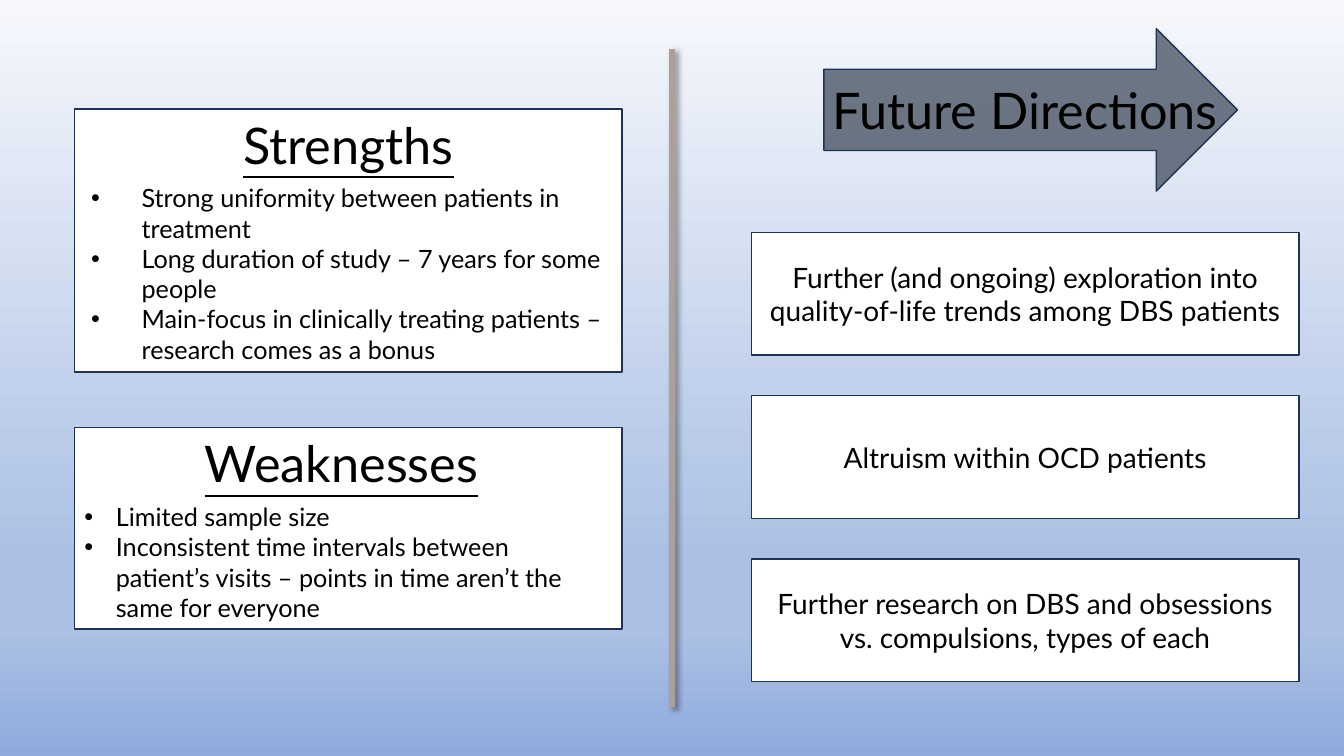
from copy import deepcopy

from lxml.etree import SubElement
from pptx import Presentation
from pptx.dml.color import RGBColor
from pptx.enum.shapes import MSO_CONNECTOR, MSO_SHAPE
from pptx.enum.text import MSO_ANCHOR, PP_ALIGN
from pptx.oxml.ns import qn
from pptx.util import Pt

BLACK = RGBColor(0x00, 0x00, 0x00)
WHITE = RGBColor(0xFF, 0xFF, 0xFF)
NAVY = RGBColor(0x1E, 0x32, 0x56)
SLATE = RGBColor(0x33, 0x3F, 0x50)
TAUPE = RGBColor(0xAD, 0xA0, 0x9A)
BACKDROP = [
    (0, RGBColor(0xF6, 0xF8, 0xFC)),
    (74, RGBColor(0xAB, 0xC0, 0xE4)),
    (83, RGBColor(0xAB, 0xC0, 0xE4)),
    (100, RGBColor(0x8F, 0xAA, 0xDC)),
]
TITLE_SIZE, CARD_SIZE, BULLET_SIZE = 36, 20, 18
BOX_WIDTH = 391


class Deck:
    """Style and current slide."""

    font = "Lato"

    def __init__(self, width, height):
        self.presentation = Presentation()
        self.presentation.slide_width = Pt(width)
        self.presentation.slide_height = Pt(height)
        self.slide = self.presentation.slides.add_slide(self.presentation.slide_layouts[6])

    def backdrop(self, stops):
        fill = self.slide.background.fill
        fill.gradient()
        fill.gradient_angle = 270
        stop_list = next(self.slide.element.iter(qn("a:gsLst")))
        for _ in range(len(stops) - len(stop_list)):
            stop_list.append(deepcopy(stop_list[0]))
        for stop, (position, color) in zip(fill.gradient_stops, stops):
            stop.position = position / 100
            stop.color.rgb = color

    def shape(self, kind, left, top, width, height, color, opacity=100):
        shape = self.slide.shapes.add_shape(kind, Pt(left), Pt(top), Pt(width), Pt(height))
        shape.shadow.inherit = False
        shape.fill.solid()
        shape.fill.fore_color.rgb = color
        if opacity < 100:
            fill_color = shape.element.spPr.find(qn("a:solidFill"))[0]
            SubElement(fill_color, qn("a:alpha"), val=str(opacity * 1000))
        shape.line.color.rgb = NAVY
        shape.line.width = Pt(1)
        return shape

    def set_text(self, paragraph, text, size, align=PP_ALIGN.CENTER, underline=None):
        paragraph.text = text
        paragraph.alignment = align
        for run in paragraph.runs:
            run.font.name = self.font
            run.font.size = Pt(size)
            run.font.color.rgb = BLACK
            run.font.underline = underline

    def label(self, text, left, top, width, height, size):
        box = self.slide.shapes.add_textbox(Pt(left), Pt(top), Pt(width), Pt(height))
        box.text_frame.word_wrap = True
        self.set_text(box.text_frame.paragraphs[0], text, size)

    def card(self, text, left, top, height):
        card = self.shape(MSO_SHAPE.RECTANGLE, left, top, BOX_WIDTH, height, WHITE)
        frame = card.text_frame
        frame.word_wrap = True
        frame.vertical_anchor = MSO_ANCHOR.MIDDLE
        frame.margin_left = frame.margin_right = Pt(11.8)
        self.set_text(frame.paragraphs[0], text, CARD_SIZE)

    def bullet_panel(self, heading, points, left, top, height, indent, margins):
        panel = self.shape(MSO_SHAPE.RECTANGLE, left, top, BOX_WIDTH, height, WHITE)
        frame = panel.text_frame
        frame.word_wrap = True
        frame.vertical_anchor = MSO_ANCHOR.TOP
        frame.margin_left, frame.margin_right = (Pt(margin) for margin in margins)
        self.set_text(frame.paragraphs[0], heading, TITLE_SIZE, underline=True)
        frame.paragraphs[0].space_after = Pt(6)
        for point in points:
            paragraph = frame.add_paragraph()
            properties = paragraph._p.get_or_add_pPr()
            properties.set("marL", str(Pt(indent)))
            properties.set("indent", str(-Pt(indent)))
            SubElement(properties, qn("a:buFont"), typeface="Arial")
            SubElement(properties, qn("a:buChar"), char="•")
            self.set_text(paragraph, point, BULLET_SIZE, PP_ALIGN.LEFT)

    def divider(self, x, top, bottom):
        line = self.slide.shapes.add_connector(
            MSO_CONNECTOR.STRAIGHT, Pt(x), Pt(top), Pt(x), Pt(bottom))
        line.line.color.rgb = TAUPE
        line.line.width = Pt(4.5)
        effects = SubElement(line._element.spPr, qn("a:effectLst"))
        shadow = SubElement(effects, qn("a:outerShdw"), blurRad=str(Pt(4)), dist=str(Pt(3)),
                            dir="2700000", algn="tl", rotWithShape="0")
        shadow_color = SubElement(shadow, qn("a:srgbClr"), val=str(BLACK))
        SubElement(shadow_color, qn("a:alpha"), val="40000")


def main():
    deck = Deck(960, 540)
    deck.backdrop(BACKDROP)

    # Strengths and weaknesses
    deck.bullet_panel("Strengths", [
        "Strong uniformity between patients in treatment",
        "Long duration of study – 7 years for some people",
        "Main-focus in clinically treating patients – research comes as a bonus",
    ], 53.2, 77.8, 188, indent=36, margins=(12, 11.6))
    deck.bullet_panel("Weaknesses", [
        "Limited sample size",
        "Inconsistent time intervals between patient’s visits – points in time "
        "aren’t the same for everyone",
    ], 53.2, 305.4, 144, indent=22.5, margins=(7.2, 16.6))

    deck.divider(480, 34.8, 505.2)

    # Future directions
    deck.shape(MSO_SHAPE.RIGHT_ARROW, 588.5, 20.5, 295.4, 116, SLATE, opacity=69)
    deck.label("Future Directions", 571, 53.3, 322.6, 51, TITLE_SIZE)
    directions = [
        "Further (and ongoing) exploration into quality-of-life trends among DBS patients",
        "Altruism within OCD patients",
        "Further research on DBS and obsessions vs. compulsions, types of each",
    ]
    for row, direction in enumerate(directions):
        deck.card(direction, 536.8, 166 + row * 116.6, 87.6)

    deck.presentation.save("out.pptx")


if __name__ == "__main__":
    main()
